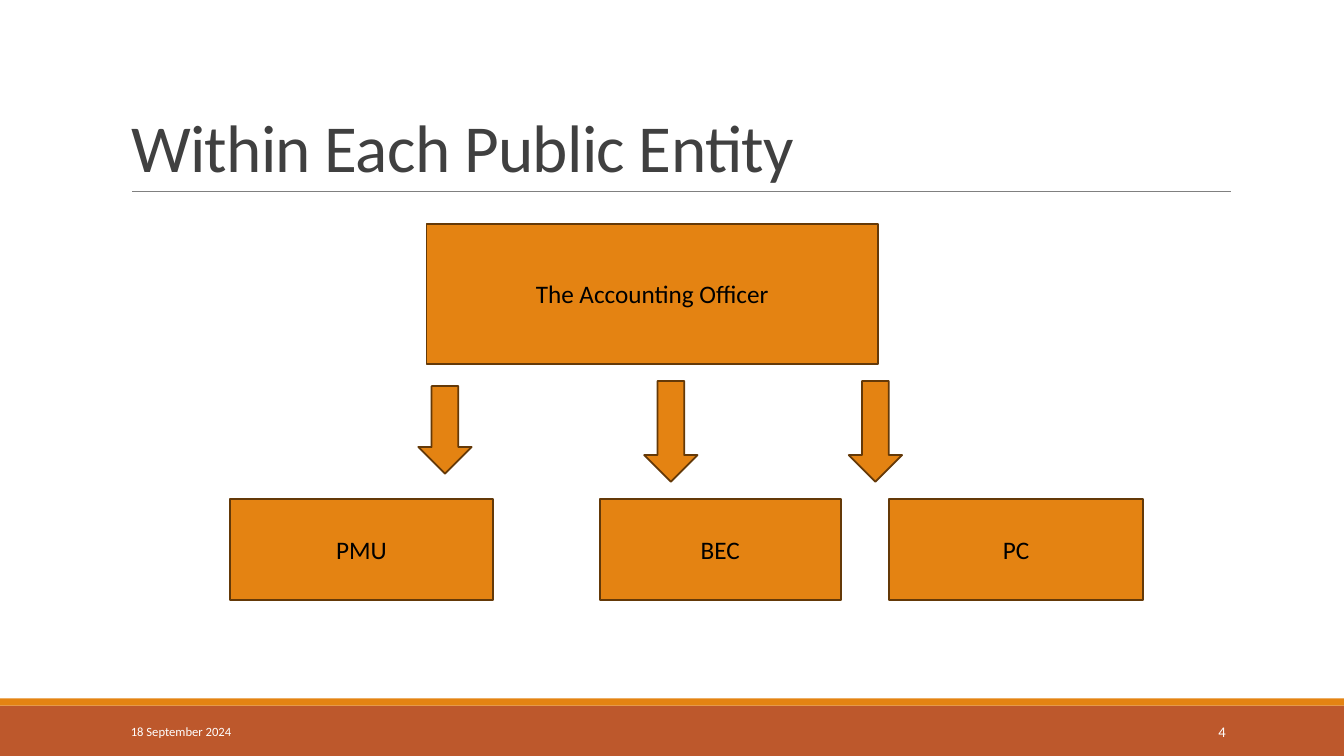
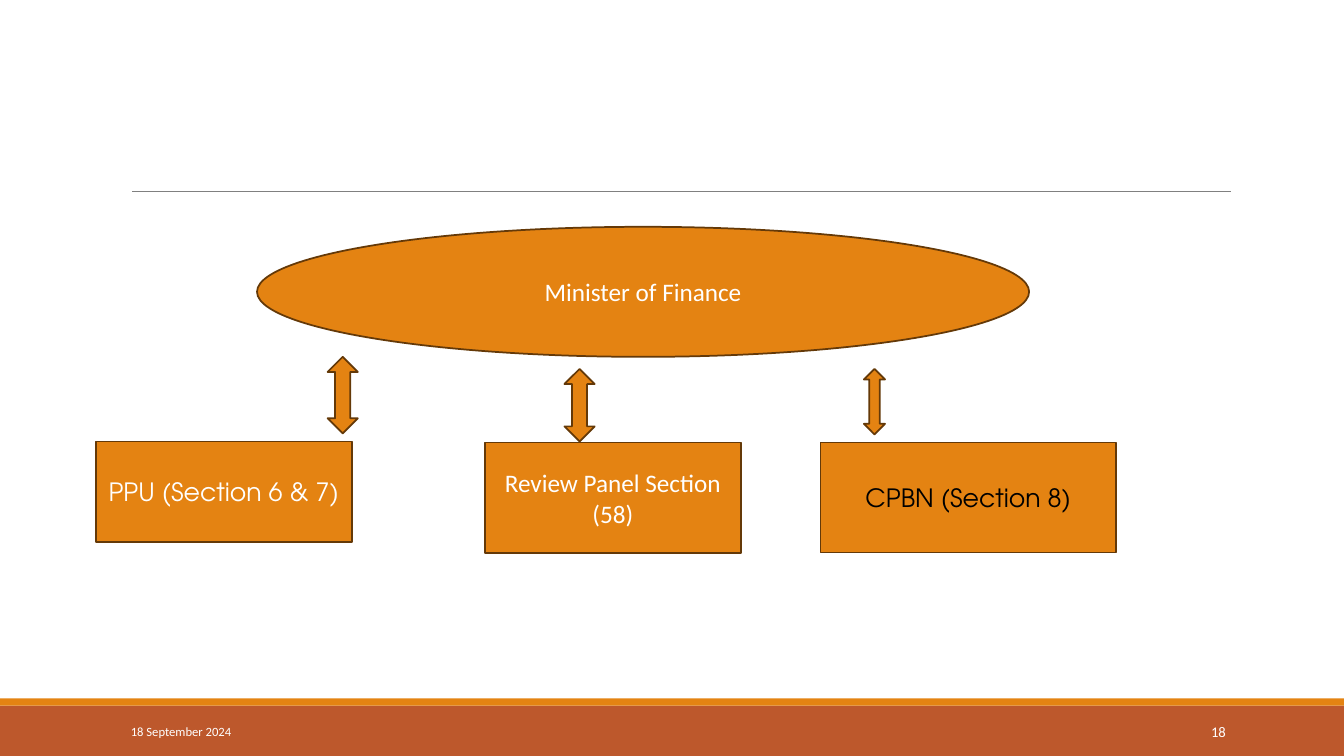
from pptx import Presentation
from pptx.dml.color import RGBColor
from pptx.enum.shapes import MSO_CONNECTOR, MSO_SHAPE as Preset
from pptx.enum.text import MSO_ANCHOR as Anchor, MSO_AUTO_SIZE, PP_ALIGN as Align
from pptx.oxml.ns import qn
from pptx.util import Inches, Pt
from lxml.etree import SubElement

# The grid has square cells: a column and a row are both 0.1 inch.
CELL = Inches(0.1)
COLUMNS, ROWS = 133.33, 75


def cells(*counts):
    return [round(count * CELL) for count in counts]


def color(hex_string):
    return RGBColor.from_string(hex_string)


class Deck:
    BODY_FONT, ALT_FONT = "Calibri", "TeX Gyre Adventor"
    ORANGE, RUST, BROWN = "E48312", "BD582C", "643908"
    RULE, TITLE, BLACK, WHITE = "808080", "404040", "000000", "FFFFFF"
    DATE = "18 September 2024"
    BAND_TOP, STRIPE = 70, 0.7

    def __init__(self):
        self.prs = Presentation()
        self.prs.slide_width, self.prs.slide_height = cells(COLUMNS, ROWS)
        self.slide = None

    def new_slide(self, number, title=None):
        """Start a slide with the shared bands, rule and footer."""
        layout = self.prs.slide_layouts[5 if title else 6]
        self.slide = self.prs.slides.add_slide(layout)
        self.shape(Preset.RECTANGLE, 0, self.BAND_TOP, COLUMNS,
                   ROWS - self.BAND_TOP, fill=self.RUST, outline=None)
        self.shape(Preset.RECTANGLE, 0, self.BAND_TOP - self.STRIPE, COLUMNS,
                   self.STRIPE, outline=None)
        self.rule(13.1, 122.1, 19)
        if title:
            self.title(title)
        self.footer(self.DATE, 12, 27, 9, Align.LEFT)
        self.footer(str(number), 108.3, 14.3, 10.5, Align.RIGHT)

    def add_text(self, frame, text, size, ink, align, anchor=Anchor.MIDDLE, font=BODY_FONT):
        frame.word_wrap = True
        frame.auto_size = MSO_AUTO_SIZE.NONE
        frame.vertical_anchor = anchor
        paragraph = frame.paragraphs[0]
        paragraph.alignment = align
        run = paragraph.add_run()
        run.text = text
        run.font.name, run.font.size = font, Pt(size)
        run.font.color.rgb = color(ink)
        return paragraph, run

    def title(self, text):
        heading = self.slide.shapes.title
        heading.left, heading.top, heading.width, heading.height = cells(12, 3.1, 110, 15.9)
        paragraph, run = self.add_text(heading.text_frame, text, 48, self.TITLE,
                                       Align.LEFT, Anchor.BOTTOM)
        paragraph.line_spacing = 0.85
        run.font._element.set("spc", "-50")

    def footer(self, text, left, width, size, align):
        box = self.slide.shapes.add_textbox(*cells(left, 70.6, width, 4))
        self.add_text(box.text_frame, text, size, self.WHITE, align)

    def rule(self, left, right, row):
        line = self.slide.shapes.add_connector(
            MSO_CONNECTOR.STRAIGHT, *cells(left, row, right, row))
        line.line.color.rgb = color(self.RULE)
        line.line.width = Pt(0.5)
        SubElement(line._element.spPr, qn("a:effectLst"))

    def shape(self, preset, left, top, width, height, fill=ORANGE, outline=BROWN):
        shape = self.slide.shapes.add_shape(preset, *cells(left, top, width, height))
        shape.shadow.inherit = False
        shape.fill.solid()
        shape.fill.fore_color.rgb = color(fill)
        if outline:
            shape.line.color.rgb = color(outline)
            shape.line.width = Pt(1.25)
        else:
            shape.line.fill.background()
        return shape

    def node(self, text, *place, preset=Preset.RECTANGLE, ink=WHITE, font=BODY_FONT):
        """Draw a labelled member of the organisation chart."""
        self.add_text(self.shape(preset, *place).text_frame, text, 18, ink,
                      Align.CENTER, font=font)


def public_entity(deck):
    deck.new_slide(4, "Within Each Public Entity")
    deck.node("The Accounting Officer", 42.3, 22.2, 44.8, 13.9, ink=deck.BLACK)
    for left, top, height in ((41.5, 38.3, 8.7), (63.9, 37.8, 10), (84.2, 37.8, 10)):
        deck.shape(Preset.DOWN_ARROW, left, top, 5.3, height)
    for unit, left, width in (("PMU", 22.8, 26.1), ("BEC", 59.5, 23.9), ("PC", 88.2, 25.2)):
        deck.node(unit, left, 49.5, width, 10, ink=deck.BLACK)


def ministry(deck):
    deck.new_slide(18)
    deck.node("Minister of Finance", 25.5, 22.5, 76.6, 12.9, preset=Preset.OVAL)
    for place in ((32.5, 35.4, 3, 7.6), (56, 36.6, 3, 7.2), (85.7, 36.6, 2.1, 6.5)):
        deck.shape(Preset.UP_DOWN_ARROW, *place)
    deck.node("PPU (Section 6 & 7)", 9.5, 43.8, 25.4, 10, font=deck.ALT_FONT)
    deck.node("Review Panel Section (58)", 48.1, 43.9, 25.4, 11)
    deck.node("CPBN (Section 8)", 81.4, 43.9, 29.3, 10.9,
              ink=deck.BLACK, font=deck.ALT_FONT)


def main():
    deck = Deck()
    public_entity(deck)
    ministry(deck)
    deck.prs.save("out.pptx")


if __name__ == "__main__":
    main()
